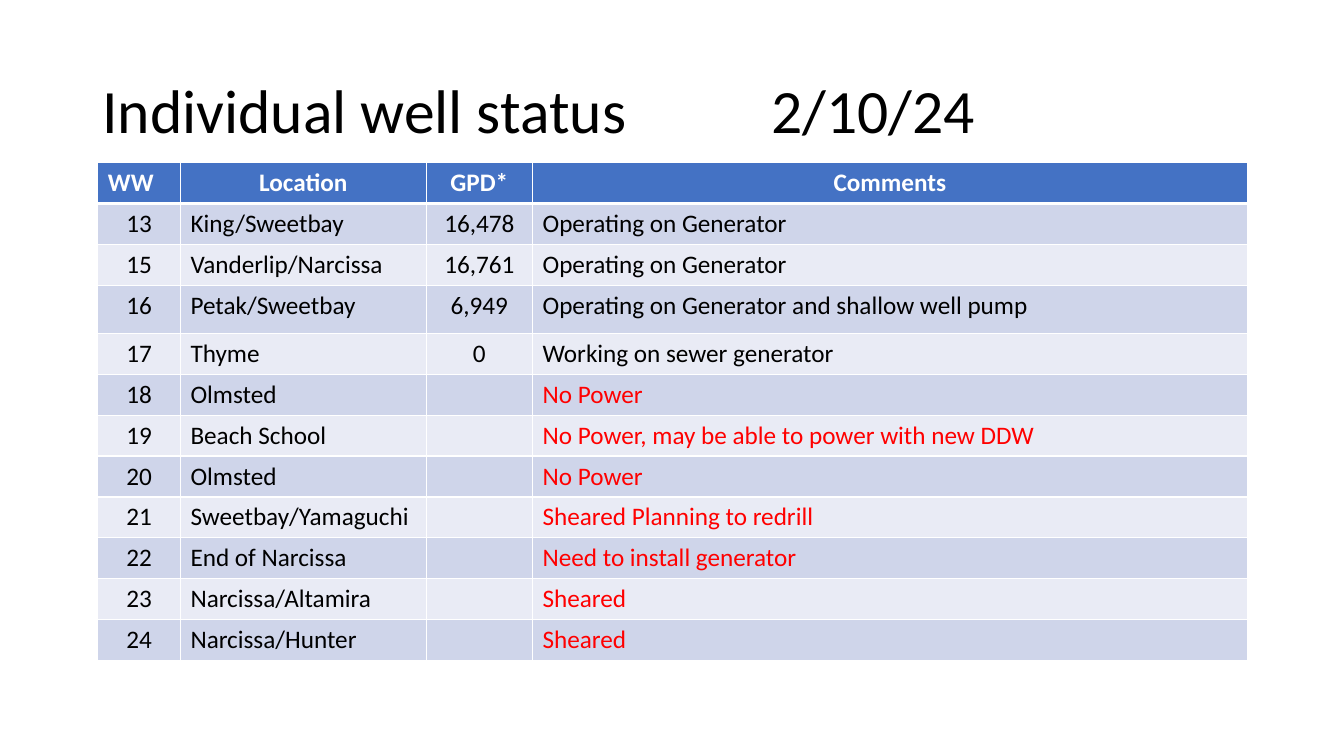
from dataclasses import dataclass

from lxml import etree
from pptx import Presentation
from pptx.dml.color import RGBColor
from pptx.enum.text import MSO_ANCHOR, PP_ALIGN
from pptx.oxml.ns import qn
from pptx.slide import Slide
from pptx.table import Table, _Cell
from pptx.text.text import _Paragraph
from pptx.util import Pt

LEFT, CENTER = PP_ALIGN.LEFT, PP_ALIGN.CENTER
MIDDLE = MSO_ANCHOR.MIDDLE


@dataclass(frozen=True)
class Theme:
    font: str = "Calibri"
    title_size: float = 44
    table_size: float = 18
    text: str = "000000"
    alert: str = "FF0000"
    light: str = "FFFFFF"
    header: str = "4472C4"
    bands: tuple[str, str] = ("CFD5EA", "E9EBF5")
    border: float = 1
    header_border: float = 3


@dataclass(frozen=True)
class Column:
    heading: str
    width: float
    heading_align: PP_ALIGN
    align: PP_ALIGN


@dataclass(frozen=True)
class Well:
    number: str
    location: str
    gallons: str
    comment: str
    alert: bool = False
    height: float = 29.2


THEME = Theme()
HEADER_HEIGHT = 29.2
COLUMNS = [
    Column("WW", 59, LEFT, CENTER),
    Column("Location", 175.5, CENTER, LEFT),
    Column("GPD*", 76, CENTER, CENTER),
    Column("Comments", 510.5, CENTER, LEFT),
]
WELLS = [
    Well("13", "King/Sweetbay", "16,478", "Operating on Generator"),
    Well("15", "Vanderlip/Narcissa", "16,761", "Operating on Generator"),
    Well("16", "Petak/Sweetbay", "6,949",
         "Operating on Generator and shallow well pump", height=34.4),
    Well("17", "Thyme", "0", "Working on sewer generator"),
    Well("18", "Olmsted", "", "No Power", alert=True),
    Well("19", "Beach School", "",
         "No Power, may be able to power with new DDW", alert=True),
    Well("20", "Olmsted", "", "No Power", alert=True),
    Well("21", "Sweetbay/Yamaguchi", "", "Sheared Planning to redrill", alert=True),
    Well("22", "End of Narcissa", "", "Need to install generator", alert=True),
    Well("23", "Narcissa/Altamira", "", "Sheared", alert=True),
    Well("24", "Narcissa/Hunter", "", "Sheared", alert=True),
]


def format_runs(para: _Paragraph, size: float, color: str, bold: bool = False) -> None:
    for span in para.runs:
        span.font.name = THEME.font
        span.font.size = Pt(size)
        span.font.bold = bold
        span.font.color.rgb = RGBColor.from_string(color)


def add_borders(cell: _Cell, top: float, bottom: float) -> None:
    """Draw all four cell edges; call before the fill, which must follow them."""
    properties = cell._tc.get_or_add_tcPr()
    widths = {"a:lnL": THEME.border, "a:lnR": THEME.border, "a:lnT": top, "a:lnB": bottom}
    for tag, width in widths.items():
        line = etree.SubElement(properties, qn(tag), w=str(Pt(width)))
        fill = etree.SubElement(line, qn("a:solidFill"))
        etree.SubElement(fill, qn("a:srgbClr"), val=THEME.light)


def fill_row(table: Table, row: int, texts: list[str], aligns: list[PP_ALIGN],
             colors: list[str], background: str) -> None:
    top = THEME.header_border if row == 1 else THEME.border
    bottom = THEME.header_border if row == 0 else THEME.border
    for column, (text, align, color) in enumerate(zip(texts, aligns, colors)):
        cell = table.cell(row, column)
        add_borders(cell, top, bottom)
        cell.fill.solid()
        cell.fill.fore_color.rgb = RGBColor.from_string(background)
        para = cell.text_frame.paragraphs[0]
        para.text = text
        para.alignment = align
        format_runs(para, THEME.table_size, color, bold=row == 0)


def add_title(page: Slide, text: str) -> None:
    box = page.shapes.add_textbox(Pt(66), Pt(28.8), Pt(828), Pt(104.4))
    frame = box.text_frame
    frame.word_wrap = True
    frame.vertical_anchor = MIDDLE
    para = frame.paragraphs[0]
    para.text = text
    para.line_spacing = 0.9
    format_runs(para, THEME.title_size, THEME.text)


def add_well_table(page: Slide) -> None:
    heights = [HEADER_HEIGHT] + [well.height for well in WELLS]
    width = sum(column.width for column in COLUMNS)
    table = page.shapes.add_table(len(heights), len(COLUMNS), Pt(69.9), Pt(116.2),
                                  Pt(width), Pt(sum(heights))).table
    for table_column, column in zip(table.columns, COLUMNS):
        table_column.width = Pt(column.width)
    for table_row, height in zip(table.rows, heights):
        table_row.height = Pt(height)

    fill_row(table, 0, [column.heading for column in COLUMNS],
             [column.heading_align for column in COLUMNS],
             [THEME.light] * len(COLUMNS), THEME.header)
    aligns = [column.align for column in COLUMNS]
    for index, well in enumerate(WELLS):
        texts = [well.number, well.location, well.gallons, well.comment]
        colors = [THEME.text] * 3 + [THEME.alert if well.alert else THEME.text]
        fill_row(table, index + 1, texts, aligns, colors, THEME.bands[index % 2])


def main() -> None:
    deck = Presentation()
    deck.slide_width, deck.slide_height = Pt(960), Pt(540)
    page = deck.slides.add_slide(deck.slide_layouts[6])
    add_title(page, "Individual well status\t\t\t 2/10/24")
    add_well_table(page)
    deck.save("out.pptx")


if __name__ == "__main__":
    main()
